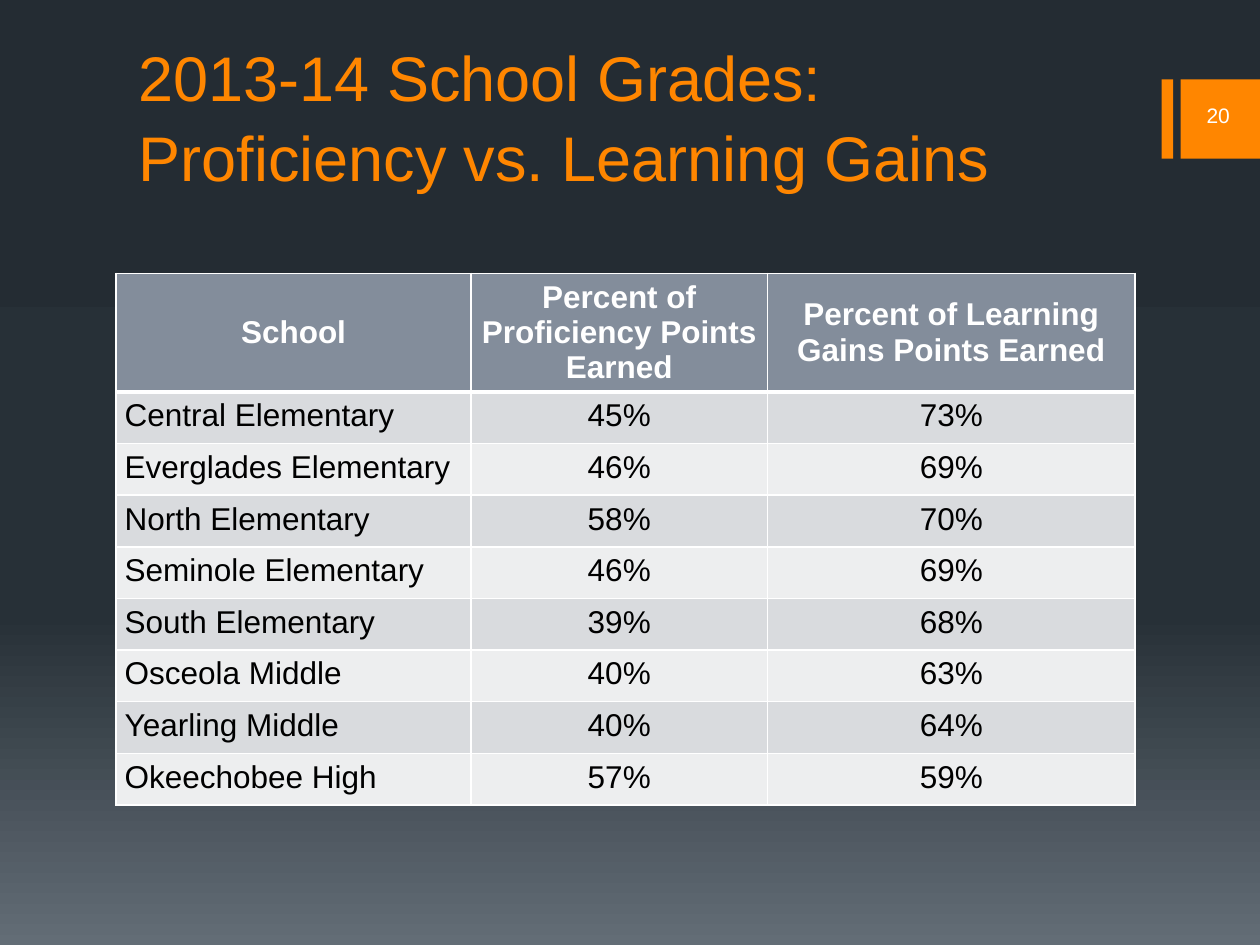
from lxml import etree
from pptx import Presentation
from pptx import util as u
from pptx.dml.color import RGBColor
from pptx.enum import shapes, text
from pptx.oxml import parse_xml
from pptx.oxml.ns import qn

# Content
TITLE = "2013-14 School Grades:\vProficiency vs. Learning Gains"
PAGE = "20"
HEADER = ("School", "Percent of Proficiency Points Earned",
          "Percent of Learning Gains Points Earned")
SCHOOLS = [
    ("Central Elementary", "45%", "73%"),
    ("Everglades Elementary", "46%", "69%"),
    ("North Elementary", "58%", "70%"),
    ("Seminole Elementary", "46%", "69%"),
    ("South Elementary", "39%", "68%"),
    ("Osceola Middle", "40%", "63%"),
    ("Yearling Middle", "40%", "64%"),
    ("Okeechobee High", "57%", "59%"),
]

# Look
FONT, ORANGE, WHITE, BLACK = "Arial", "FF8600", "FFFFFF", "000000"
HEAD_FILL, BANDS = "838D9B", ("D9DBDE", "EDEEEF")
BACKGROUND = [(0, "242C33"), (65, "273037"), (100, "636D76")]
COL_WIDTHS = (2.82, 2.35, 2.92)
HEAD_HEIGHT, ROW_HEIGHT = 0.93, 0.41
BARS = [(9.22, 0.09), (9.37, 0.63)]  # left, width


def rgb(value):
    return RGBColor.from_string(value)


def style(p, size, color, align=text.PP_ALIGN.LEFT, bold=False):
    p.alignment = align
    p.font.name, p.font.size, p.font.bold = FONT, u.Pt(size), bold
    p.font.color.rgb = rgb(color)


def set_background(s):
    stops = "".join(f'<a:gs pos="{pos * 1000}"><a:srgbClr val="{c}"/></a:gs>'
                    for pos, c in BACKGROUND)
    s.background.fill.solid()
    bg_pr = s.background._cSld.find(".//" + qn("p:bgPr"))
    bg_pr.replace(bg_pr[0], parse_xml(
        '<a:gradFill xmlns:a="http://schemas.openxmlformats.org/drawingml/2006/main">'
        f'<a:gsLst>{stops}</a:gsLst><a:lin ang="5400000" scaled="0"/></a:gradFill>'))


def set_borders(cell, widths):
    tc_pr = cell._tc.get_or_add_tcPr()
    for i, (side, width) in enumerate(zip("LRTB", widths)):
        ln = etree.Element(qn(f"a:ln{side}"), w=str(u.Pt(width)))
        fill = etree.SubElement(ln, qn("a:solidFill"))
        etree.SubElement(fill, qn("a:srgbClr"), val=WHITE)
        tc_pr.insert(i, ln)


prs = Presentation()
prs.slide_width, prs.slide_height = u.Inches(10), u.Inches(7.5)
s = prs.slides.add_slide(prs.slide_layouts[5])
set_background(s)

# Orange bars at the right edge
for left, width in BARS:
    bar = s.shapes.add_shape(shapes.MSO_SHAPE.RECTANGLE, u.Inches(left), u.Inches(0.63),
                             u.Inches(width), u.Inches(0.63))
    bar.shadow.inherit = False
    bar.fill.solid()
    bar.fill.fore_color.rgb = rgb(ORANGE)
    bar.line.fill.background()

# Title
title = s.shapes.title
title.left, title.top = u.Inches(1), u.Inches(0.33)
title.width, title.height = u.Inches(8), u.Inches(1.26)
tf = title.text_frame
tf.text = TITLE
tf.auto_size = text.MSO_AUTO_SIZE.NONE
tf.vertical_anchor = text.MSO_ANCHOR.BOTTOM
style(tf.paragraphs[0], 36, ORANGE)
tf.paragraphs[0].line_spacing = 1.05

# Table
rows = [HEADER] + SCHOOLS
table = s.shapes.add_table(
    len(rows), len(HEADER), u.Inches(0.92), u.Inches(2.17), u.Inches(sum(COL_WIDTHS)),
    u.Inches(HEAD_HEIGHT + ROW_HEIGHT * len(SCHOOLS))).table
for column, width in zip(table.columns, COL_WIDTHS):
    column.width = u.Inches(width)
for r, values in enumerate(rows):
    head = r == 0
    table.rows[r].height = u.Inches(HEAD_HEIGHT if head else ROW_HEIGHT)
    for c, value in enumerate(values):
        cell = table.cell(r, c)
        cell.text = value
        cell.margin_left = cell.margin_right = u.Inches(0.07)
        cell.margin_top = cell.margin_bottom = u.Inches(0.05)
        cell.vertical_anchor = text.MSO_ANCHOR.MIDDLE if head else text.MSO_ANCHOR.TOP
        cell.fill.solid()
        cell.fill.fore_color.rgb = rgb(HEAD_FILL if head else BANDS[(r - 1) % 2])
        set_borders(cell, (1, 1, 3 if r == 1 else 1, 3 if head else 1))
        align = text.PP_ALIGN.CENTER if head or c else text.PP_ALIGN.LEFT
        style(cell.text_frame.paragraphs[0], 18, WHITE if head else BLACK, align, head)

# Page number
number = s.shapes.add_textbox(u.Inches(8.83), u.Inches(0.75), u.Inches(1.03), u.Inches(0.33))
tf = number.text_frame
tf.word_wrap = True
tf.vertical_anchor = text.MSO_ANCHOR.MIDDLE
tf.text = PAGE
style(tf.paragraphs[0], 12, WHITE, text.PP_ALIGN.RIGHT)

prs.save("out.pptx")
